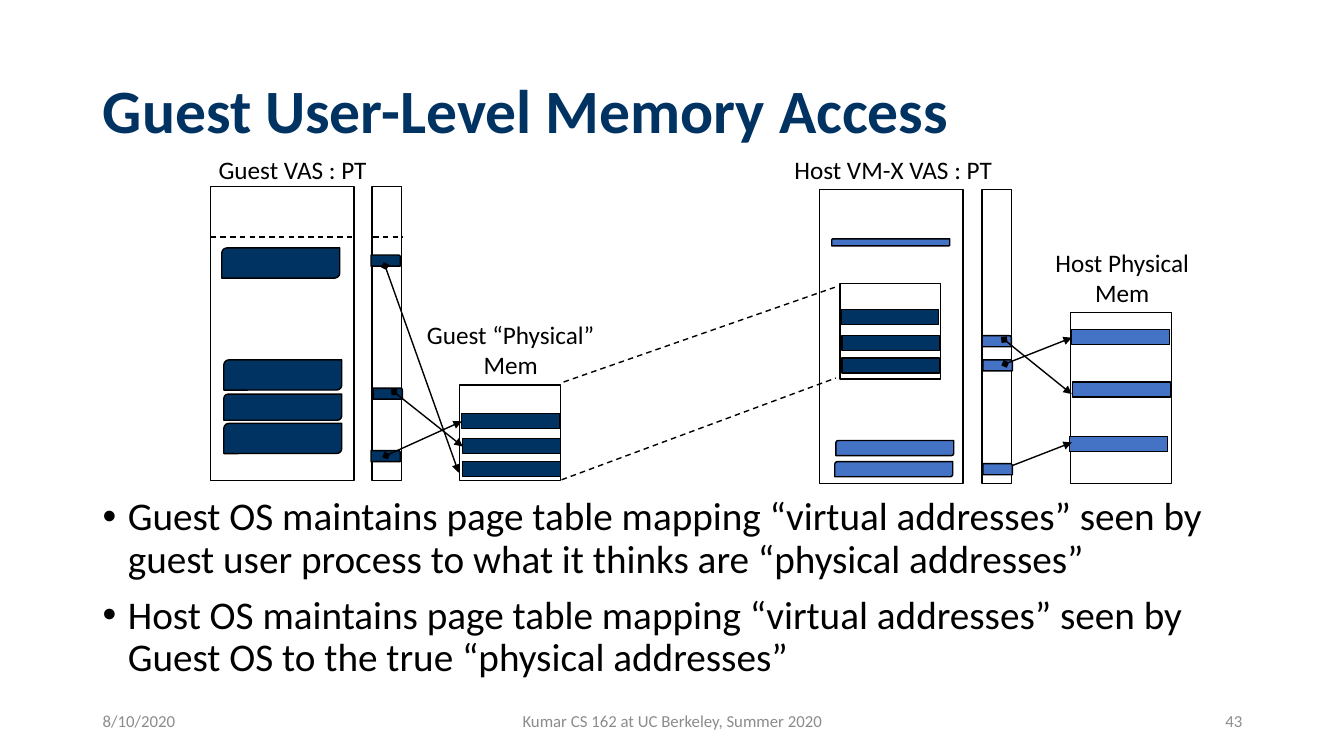
"""Build the slide on guest user-level memory access."""
import pptx
import pptx.util
import pptx.dml.color
import pptx.enum.dml
import pptx.enum.shapes
import pptx.enum.text
import pptx.oxml.ns
import lxml.etree

Inches = pptx.util.Inches
Pt = pptx.util.Pt
qn = pptx.oxml.ns.qn
ALIGN = pptx.enum.text.PP_ALIGN
ANCHOR = pptx.enum.text.MSO_ANCHOR
SHAPE = pptx.enum.shapes.MSO_SHAPE
NAVY, BLUE, BLACK, GRAY = "003262", "4472C4", "000000", "8C8C8C"


def rgb(color):
    """Return the colour for a hex string."""
    return pptx.dml.color.RGBColor.from_string(color)


def write(sp, *texts, size=18, color=BLACK, bold=False, align=ALIGN.LEFT,
          anchor=ANCHOR.TOP, spacing=1.0, before=0, bullet=False):
    """Write one formatted paragraph per text into a shape."""
    tf = sp.text_frame
    tf.word_wrap = True
    tf.auto_size = pptx.enum.text.MSO_AUTO_SIZE.NONE
    tf.vertical_anchor = anchor
    for i, text in enumerate(texts):
        p = tf.add_paragraph() if i else tf.paragraphs[0]
        p.alignment = align
        p.line_spacing = spacing
        p.space_before = Pt(before)
        r = p.add_run()
        r.text = text
        r.font.name = "Calibri"
        r.font.size = Pt(size)
        r.font.bold = bold
        r.font.color.rgb = rgb(color)
        if bullet:
            pPr = p._p.get_or_add_pPr()
            pPr.set("marL", str(Inches(0.25)))
            pPr.set("indent", str(Inches(-0.25)))
            lxml.etree.SubElement(pPr, qn("a:buFont"), typeface="Arial")
            lxml.etree.SubElement(pPr, qn("a:buChar"), char="•")


prs = pptx.Presentation()
prs.slide_width, prs.slide_height = Inches(13.33), Inches(7.5)
s = prs.slides.add_slide(prs.slide_layouts[5])

title = s.shapes.title
title.left, title.top = Inches(0.92), Inches(0.4)
title.width, title.height = Inches(11.5), Inches(1.45)
write(title, "Guest User-Level Memory Access", size=44, color=NAVY, bold=True,
      anchor=ANCHOR.MIDDLE, spacing=0.9)

body = s.shapes.add_textbox(Inches(0.92), Inches(4.88), Inches(11.5), Inches(2.07))
write(body,
      "Guest OS maintains page table mapping “virtual addresses” seen by guest "
      "user process to what it thinks are “physical addresses”",
      "Host OS maintains page table mapping “virtual addresses” seen by Guest OS "
      "to the true “physical addresses”",
      size=28, spacing=0.9, before=10, bullet=True)

for text, x, w, align in [
    ("8/10/2020", 0.92, 3, ALIGN.LEFT),
    ("Kumar CS 162 at UC Berkeley, Summer 2020", 4.42, 4.5, ALIGN.CENTER),
    ("43", 9.42, 3, ALIGN.RIGHT),
]:
    sp = s.shapes.add_textbox(Inches(x), Inches(6.95), Inches(w), Inches(0.4))
    write(sp, text, size=12, color=GRAY, align=align, anchor=ANCHOR.MIDDLE)

for text, x, y, w, h, align in [
    ("Guest VAS : PT", 2.07, 1.48, 1.96, 0.4, ALIGN.LEFT),
    ("Guest “Physical” Mem", 4.08, 3.12, 1.97, 0.71, ALIGN.CENTER),
    ("Host VM-X VAS : PT", 7.78, 1.48, 2.51, 0.4, ALIGN.LEFT),
    ("Host Physical Mem", 10.19, 2.4, 1.88, 0.71, ALIGN.CENTER),
]:
    sp = s.shapes.add_textbox(Inches(x), Inches(y), Inches(w), Inches(h))
    write(sp, text, align=align)

spaces = [(2.09, 1.85, 1.42, 2.92), (8.13, 1.88, 1.42, 2.92)]
tables = [(3.69, 1.85, 0.29, 2.92), (9.74, 1.88, 0.29, 2.92)]
memories = [(4.56, 3.82, 1, 0.95), (8.33, 2.81, 1, 0.95), (10.62, 3.1, 1, 1.7)]
blocks = [(SHAPE.RECTANGLE, None, *box) for box in spaces + tables + memories]

guest_regions = [(2.2, 2.46, 0.3), (2.22, 3.57, 0.3), (2.22, 3.91, 0.26), (2.22, 4.2, 0.3)]
host_regions = [(8.25, 2.37, 0.07), (8.29, 4.37, 0.15), (8.28, 4.58, 0.15)]
guest_pages = [(4.58, 4.1), (4.59, 4.35), (4.59, 4.58), (8.34, 3.07), (8.35, 3.33), (8.35, 3.55)]
host_pages = [(10.63, 3.27), (10.64, 3.79), (10.61, 4.33)]
guest_entries = [(3.68, 2.53), (3.7, 3.85), (3.68, 4.47)]
host_entries = [(9.74, 3.33), (9.75, 3.57), (9.75, 4.6)]
for color, regions, pages, entries in [
    (NAVY, guest_regions, guest_pages, guest_entries),
    (BLUE, host_regions, host_pages, host_entries),
]:
    blocks += [(SHAPE.ROUND_2_DIAG_RECTANGLE, color, x, y, 1.17, h) for x, y, h in regions]
    blocks += [(SHAPE.RECTANGLE, color, x, y, 0.97, 0.15) for x, y in pages]
    blocks += [(SHAPE.ROUND_1_RECTANGLE, color, x, y, 0.29, 0.11) for x, y in entries]

for kind, color, x, y, w, h in blocks:
    sp = s.shapes.add_shape(kind, Inches(x), Inches(y), Inches(w), Inches(h))
    sp.shadow.inherit = False
    if color:
        sp.fill.solid()
        sp.fill.fore_color.rgb = rgb(color)
    else:
        sp.fill.background()
    sp.line.color.rgb = rgb(BLACK)
    sp.line.width = Pt(1)
last_entry = sp

dashes = [
    (2.09, 2.35, 3.51, 2.35), (3.7, 2.35, 3.99, 2.35),
    (5.59, 3.79, 8.28, 2.85), (5.57, 4.76, 8.29, 3.75),
]
arrows = [
    (3.83, 4.52, 4.58, 4.18), (3.82, 2.64, 4.55, 4.69), (3.91, 3.89, 4.59, 4.43),
    (9.96, 3.37, 10.63, 3.91), (9.97, 3.61, 10.63, 3.35), (9.96, 4.65, 10.63, 4.39),
]
for ends in dashes + arrows:
    line = s.shapes.add_connector(pptx.enum.shapes.MSO_CONNECTOR.STRAIGHT, *map(Inches, ends))
    line.line.color.rgb = rgb(BLACK)
    line.line.width = Pt(1)
    if ends in dashes:
        line.line.dash_style = pptx.enum.dml.MSO_LINE.DASH
    else:
        ln = line.line._get_or_add_ln()
        lxml.etree.SubElement(ln, qn("a:headEnd"), type="diamond")
        lxml.etree.SubElement(ln, qn("a:tailEnd"), type="triangle")
    lxml.etree.SubElement(line._element.spPr, qn("a:effectLst"))

s.shapes._spTree.append(last_entry._element)

prs.save("out.pptx")
